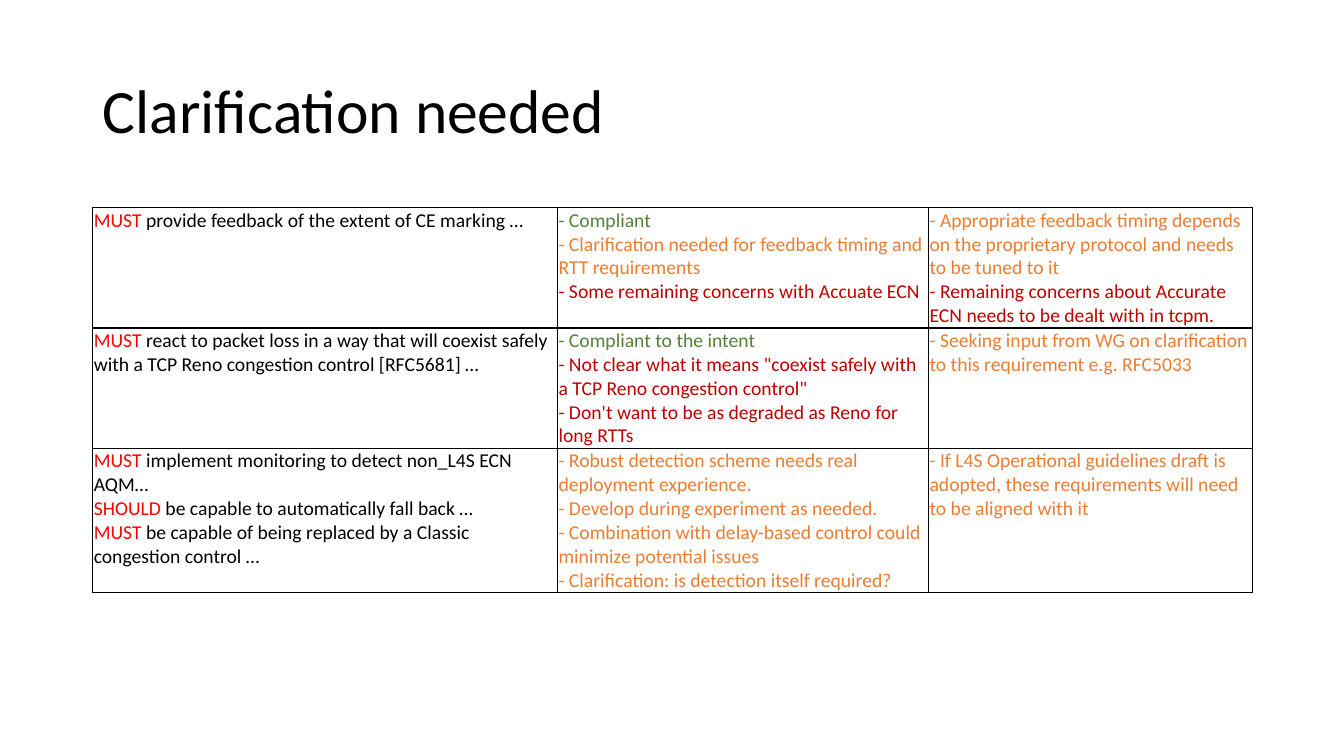
import pptx
import pptx.dml.color
import pptx.enum.text
import pptx.oxml
import pptx.oxml.ns
import pptx.util
from pptx.util import Inches

BLACK = pptx.dml.color.RGBColor(0x00, 0x00, 0x00)
RED = pptx.dml.color.RGBColor(0xFF, 0x00, 0x00)
GREEN = pptx.dml.color.RGBColor(0x54, 0x82, 0x35)
ORANGE = pptx.dml.color.RGBColor(0xED, 0x7D, 0x31)
DARK_RED = pptx.dml.color.RGBColor(0xC0, 0x00, 0x00)
FONT = "Calibri"

COLUMN_WIDTHS = [4.61, 3.68, 3.21]
ROW_HEIGHTS = [1.19, 1.19, 1.43]


def requirement(keyword, wording):
    return [(keyword, RED), (" " + wording, BLACK)]


def remark(wording, color):
    return [("- " + wording, color)]


# Each cell is a list of lines, each line a list of (text, colour) runs
ROWS = [
    [
        [requirement("MUST", "provide feedback of the extent of CE marking …")],
        [remark("Compliant", GREEN),
         remark("Clarification needed for feedback timing and RTT requirements", ORANGE),
         remark("Some remaining concerns with Accuate ECN", DARK_RED)],
        [remark("Appropriate feedback timing depends on the proprietary protocol "
                "and needs to be tuned to it", ORANGE),
         remark("Remaining concerns about Accurate ECN needs to be dealt with in tcpm.",
                DARK_RED)],
    ],
    [
        [requirement("MUST", "react to packet loss in a way that will coexist safely "
                             "with a TCP Reno congestion control [RFC5681] …")],
        [remark("Compliant to the intent", GREEN),
         remark('Not clear what it means "coexist safely with a TCP Reno '
                'congestion control"', DARK_RED),
         remark("Don't want to be as degraded as Reno for long RTTs", DARK_RED)],
        [remark("Seeking input from WG on clarification to this requirement "
                "e.g. RFC5033", ORANGE)],
    ],
    [
        [requirement("MUST", "implement monitoring to detect non_L4S ECN AQM…"),
         requirement("SHOULD", "be capable to automatically fall back …"),
         requirement("MUST", "be capable of being replaced by a Classic "
                             "congestion control …")],
        [remark("Robust detection scheme needs real deployment experience.", ORANGE),
         remark("Develop during experiment as needed.", ORANGE),
         remark("Combination with delay-based control could minimize potential issues",
                ORANGE),
         remark("Clarification: is detection itself required?", ORANGE)],
        [remark("If L4S Operational guidelines draft is adopted, these requirements "
                "will need to be aligned with it", ORANGE)],
    ],
]


def add_title(slide, text):
    title = slide.shapes.title
    title.left, title.top = Inches(0.92), Inches(0.4)
    title.width, title.height = Inches(11.5), Inches(1.45)
    frame = title.text_frame
    frame.text = text
    frame.word_wrap = True
    frame.vertical_anchor = pptx.enum.text.MSO_ANCHOR.MIDDLE
    heading = frame.paragraphs[0]
    heading.alignment = pptx.enum.text.PP_ALIGN.LEFT
    heading.line_spacing = 0.9
    heading.font.name = FONT
    heading.font.size = pptx.util.Pt(44)
    heading.font.color.rgb = BLACK


def set_borders(cell):
    properties = cell._tc.get_or_add_tcPr()
    for position, side in enumerate(("lnL", "lnR", "lnT", "lnB")):
        border = pptx.oxml.parse_xml(
            f'<a:{side} {pptx.oxml.ns.nsdecls("a")} w="{pptx.util.Pt(1)}">'
            f'<a:solidFill><a:srgbClr val="{BLACK}"/></a:solidFill></a:{side}>')
        properties.insert(position, border)


def fill_cell(cell, lines):
    cell.fill.background()
    cell.margin_left = cell.margin_right = cell.margin_top = Inches(0.01)
    cell.margin_bottom = 0
    set_borders(cell)
    frame = cell.text_frame
    for index, line in enumerate(lines):
        paragraph = frame.add_paragraph() if index else frame.paragraphs[0]
        paragraph.font.name = FONT
        paragraph.font.size = pptx.util.Pt(14)
        for text, color in line:
            run = paragraph.add_run()
            run.text = text
            run.font.color.rgb = color


def add_requirements_table(slide):
    table = slide.shapes.add_table(
        len(ROW_HEIGHTS), len(COLUMN_WIDTHS), Inches(0.92), Inches(2.06),
        Inches(sum(COLUMN_WIDTHS)), Inches(sum(ROW_HEIGHTS))).table
    table.first_row = table.horz_banding = False
    for column, width in zip(table.columns, COLUMN_WIDTHS):
        column.width = Inches(width)
    for row, height, contents in zip(table.rows, ROW_HEIGHTS, ROWS):
        row.height = Inches(height)
        for cell, lines in zip(row.cells, contents):
            fill_cell(cell, lines)


def main():
    presentation = pptx.Presentation()
    presentation.slide_width = Inches(13.33)
    presentation.slide_height = Inches(7.5)
    slide = presentation.slides.add_slide(presentation.slide_layouts[5])
    add_title(slide, "Clarification needed")
    add_requirements_table(slide)
    presentation.save("out.pptx")


if __name__ == "__main__":
    main()
